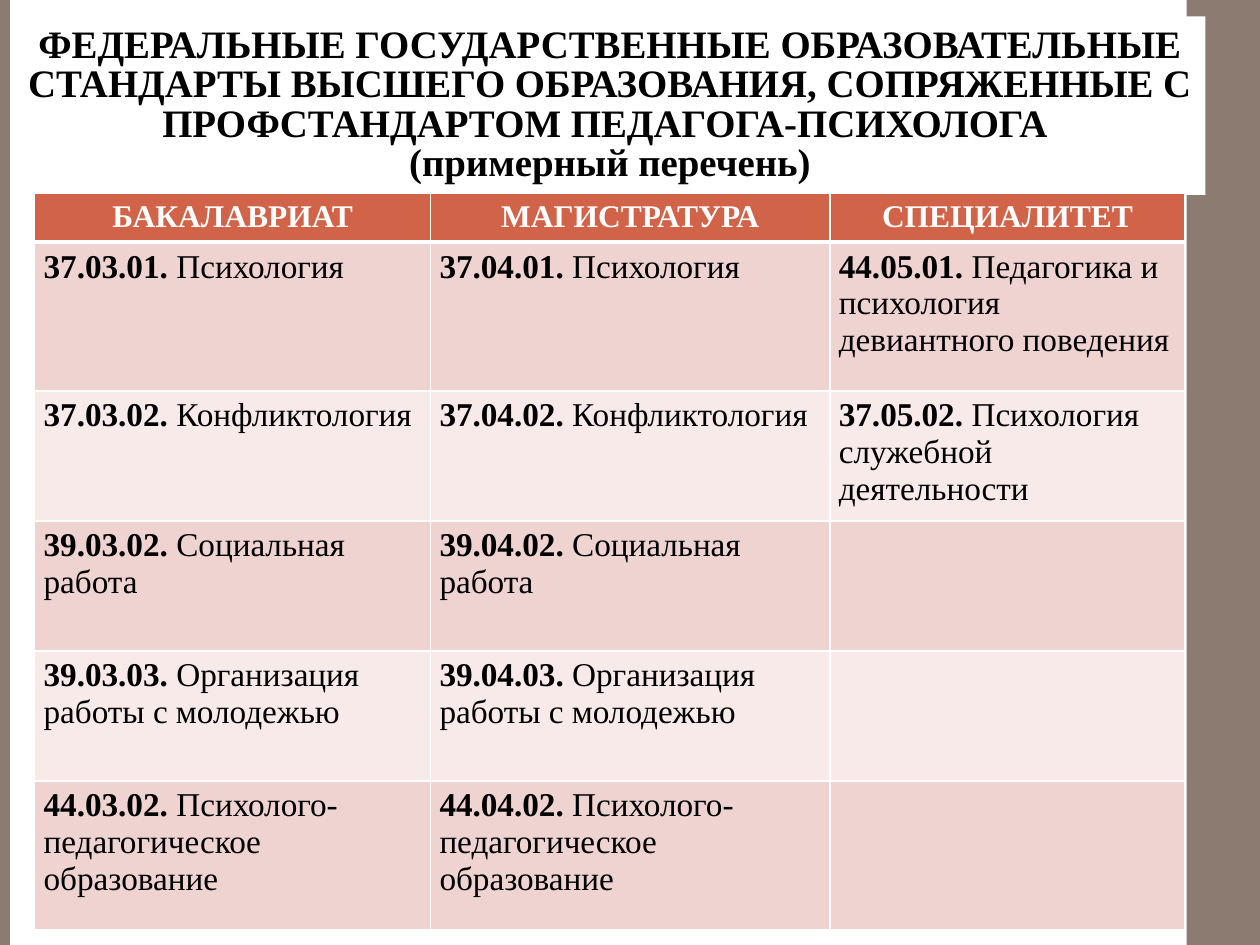
from pptx import Presentation
from pptx.dml.color import RGBColor
from pptx.enum.shapes import MSO_SHAPE
from pptx.enum.text import MSO_ANCHOR, MSO_AUTO_SIZE, PP_ALIGN
from pptx.oxml.ns import qn
from pptx.util import Cm, Pt
from lxml import etree

RECTANGLE = MSO_SHAPE.RECTANGLE
MIDDLE = MSO_ANCHOR.MIDDLE
NO_AUTOFIT = MSO_AUTO_SIZE.NONE
CENTER, LEFT = PP_ALIGN.CENTER, PP_ALIGN.LEFT
TITLE_ONLY = 5
FONT = "Times New Roman"
COLORS = {
    "bar": "8C7B70",
    "white": "FFFFFF",
    "black": "000000",
    "header": "D16349",
    "odd": "EED3D0",
    "even": "F7EAE9",
}

TITLE = [
    "ФЕДЕРАЛЬНЫЕ ГОСУДАРСТВЕННЫЕ ОБРАЗОВАТЕЛЬНЫЕ СТАНДАРТЫ ВЫСШЕГО "
    "ОБРАЗОВАНИЯ, СОПРЯЖЕННЫЕ С ПРОФСТАНДАРТОМ ПЕДАГОГА-ПСИХОЛОГА ",
    "(примерный перечень)",
]
LEVELS = ["БАКАЛАВРИАТ", "МАГИСТРАТУРА", "СПЕЦИАЛИТЕТ"]
# Bachelor and master programmes share a name and differ in the code's middle part.
PROGRAMMES = [
    ("37", "01", "Психология"),
    ("37", "02", "Конфликтология"),
    ("39", "02", "Социальная работа"),
    ("39", "03", "Организация работы с молодежью"),
    ("44", "02", "Психолого-педагогическое образование"),
]
SPECIALIST = [
    ("44.05.01. ", "Педагогика и психология девиантного поведения"),
    ("37.05.02. ", "Психология служебной деятельности"),
]
COLUMN_WIDTHS = [7.98, 8.05, 7.16]
ROW_HEIGHTS = [0.99, 3, 2.62, 2.62, 2.62, 3]


def color(name):
    return RGBColor.from_string(COLORS[name])


def paint(fill, name):
    fill.solid()
    fill.fore_color.rgb = color(name)


def format_font(font, size, name, bold):
    font.name = FONT
    font.size = Pt(size)
    font.bold = bold
    font.color.rgb = color(name)


def add_bar(page, left, width, height):
    bar = page.shapes.add_shape(RECTANGLE, Cm(left), 0, Cm(width), height)
    bar.shadow.inherit = False
    paint(bar.fill, "bar")
    bar.line.fill.background()


def add_title(page):
    title = page.shapes.title
    # Bring the title in front of the side bars.
    page.shapes._spTree.append(title._element)
    title.left, title.top = Cm(0.3), Cm(0.33)
    title.width, title.height = Cm(24), Cm(3.6)
    paint(title.fill, "white")
    frame = title.text_frame
    frame.word_wrap = True
    frame.auto_size = NO_AUTOFIT
    frame.vertical_anchor = MIDDLE
    frame.margin_left = frame.margin_right = Cm(0.2)
    frame.text = "\n".join(TITLE)
    for para in frame.paragraphs:
        para.alignment = CENTER
        para.line_spacing = 0.84
        para.space_before = Pt(0)
        for span in para.runs:
            format_font(span.font, 22.2, "black", True)


def add_borders(cell, bottom_width):
    properties = cell._tc.get_or_add_tcPr()
    for side in "LRTB":
        width = bottom_width if side == "B" else 1
        line = etree.SubElement(properties, qn(f"a:ln{side}"), w=str(Pt(width)))
        fill = etree.SubElement(line, qn("a:solidFill"))
        etree.SubElement(fill, qn("a:srgbClr"), val=COLORS["white"])


def fill_cell(cell, spans, fill, size, name, alignment, bottom_width):
    """Write (text, bold) spans into a bordered, filled cell."""
    add_borders(cell, bottom_width)
    paint(cell.fill, fill)
    cell.margin_left = cell.margin_right = Cm(0.18)
    cell.margin_top = cell.margin_bottom = Cm(0.13)
    para = cell.text_frame.paragraphs[0]
    para.alignment = alignment
    for text, bold in spans:
        span = para.add_run()
        span.text = text
        format_font(span.font, size, name, bold)


def programme_rows():
    """Give the three (code, name) entries of each row; None is an empty cell."""
    for index, (group, number, name) in enumerate(PROGRAMMES):
        row = [(f"{group}.{level}.{number}. ", name) for level in ("03", "04")]
        yield row + [SPECIALIST[index] if index < len(SPECIALIST) else None]


def add_programme_table(page):
    table = page.shapes.add_table(
        len(ROW_HEIGHTS), len(COLUMN_WIDTHS), Cm(0.7), Cm(3.89),
        Cm(sum(COLUMN_WIDTHS)), Cm(sum(ROW_HEIGHTS)),
    ).table
    for column, width in zip(table.columns, COLUMN_WIDTHS):
        column.width = Cm(width)
    for row, height in zip(table.rows, ROW_HEIGHTS):
        row.height = Cm(height)
    for index, level in enumerate(LEVELS):
        fill_cell(table.cell(0, index), [(level, True)], "header", 18, "white", CENTER, 3)
    for number, entries in enumerate(programme_rows(), start=1):
        fill = "odd" if number % 2 else "even"
        for index, entry in enumerate(entries):
            spans = zip(entry, (True, False)) if entry else []
            fill_cell(table.cell(number, index), spans, fill, 19, "black", LEFT, 1)


def main():
    deck = Presentation()
    deck.slide_width, deck.slide_height = Cm(25.4), Cm(19.05)
    page = deck.slides.add_slide(deck.slide_layouts[TITLE_ONLY])
    paint(page.background.fill, "white")
    add_bar(page, 23.92, 1.48, deck.slide_height)
    add_bar(page, 0, 0.2, deck.slide_height)
    add_title(page)
    add_programme_table(page)
    deck.save("out.pptx")


if __name__ == "__main__":
    main()
